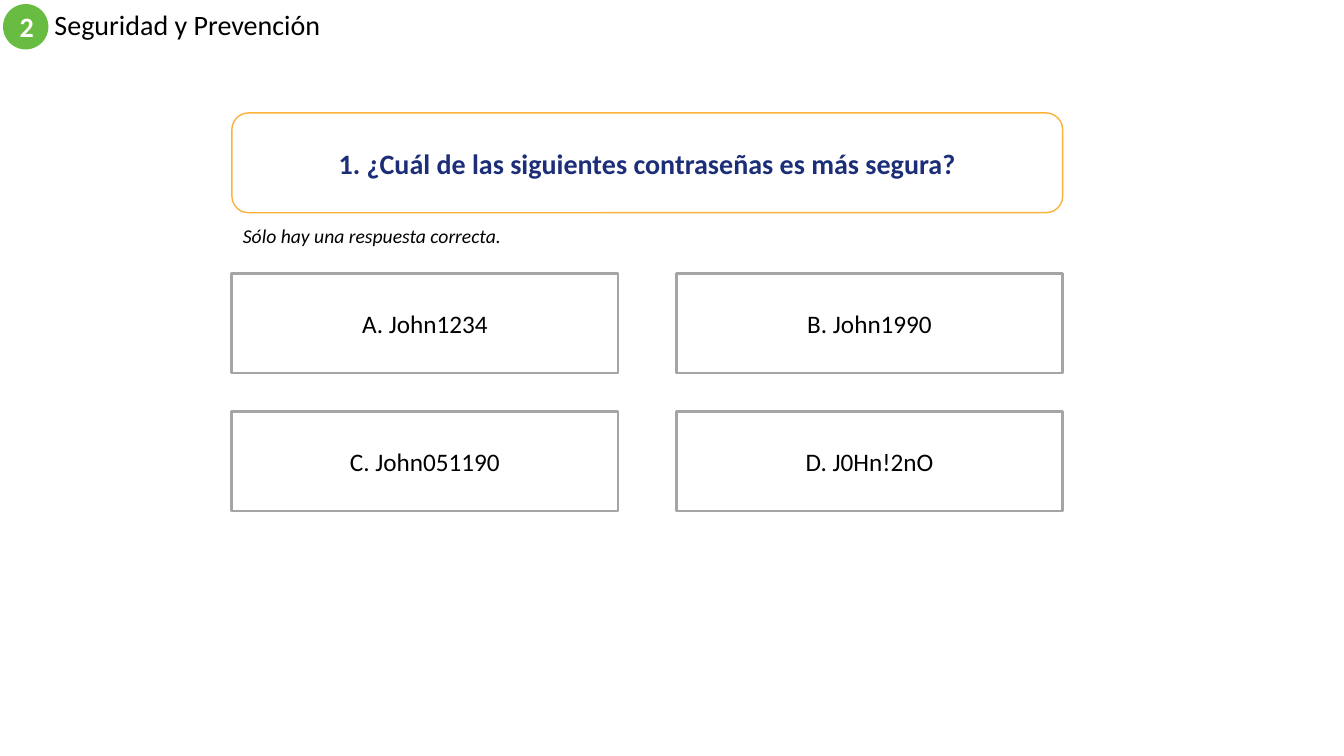
import pptx
import pptx.util
import pptx.dml.color
import pptx.enum.shapes
import pptx.enum.text
from dataclasses import dataclass

Inches = pptx.util.Inches
Kind = pptx.enum.shapes.MSO_SHAPE
Align = pptx.enum.text.PP_ALIGN
Anchor = pptx.enum.text.MSO_ANCHOR


@dataclass(frozen=True)
class Theme:
    font: str = "Calibri"
    black: str = "000000"
    white: str = "FFFFFF"
    green: str = "68BC42"
    navy: str = "1C2E78"
    amber: str = "FCB13A"
    gray: str = "A5A5A5"
    head: int = 20
    body: int = 18
    hint: int = 14


THEME = Theme()


def color(code):
    return pptx.dml.color.RGBColor.from_string(code)


def write(shape, text, size, ink=THEME.black, align=Align.CENTER,
          bold=False, italic=False):
    frame = shape.text_frame
    frame.word_wrap = True
    frame.vertical_anchor = Anchor.MIDDLE
    frame.text = text
    para = frame.paragraphs[0]
    para.alignment = align
    font = para.font
    font.name, font.size = THEME.font, pptx.util.Pt(size)
    font.bold, font.italic = bold, italic
    font.color.rgb = color(ink)
    return para


def panel(slide, kind, box, fill=THEME.white, line=None, width=1):
    shape = slide.shapes.add_shape(kind, *map(Inches, box))
    shape.shadow.inherit = False
    shape.fill.solid()
    shape.fill.fore_color.rgb = color(fill)
    if line:
        shape.line.color.rgb = color(line)
        shape.line.width = pptx.util.Pt(width)
    else:
        shape.line.fill.background()
    return shape


# Section number and title
def header(slide, box, number, text):
    left, top, width, height = box
    title = slide.shapes.title
    title.left, title.top = Inches(left + 0.41), Inches(top)
    title.width, title.height = Inches(width - 0.41), Inches(height)
    para = write(title, text, THEME.head, align=Align.LEFT)
    para.line_spacing = 0.9
    badge = panel(slide, Kind.OVAL, (left, top, height, height), THEME.green)
    write(badge, number, THEME.head, THEME.white, bold=True)


# Question frame with the hint below it
def question(slide, box, text, hint):
    left, top, width, height = box
    frame = panel(slide, Kind.ROUNDED_RECTANGLE, box, line=THEME.amber)
    write(frame, text, THEME.head, THEME.navy, bold=True)
    note = slide.shapes.add_textbox(
        *map(Inches, (left + 0.01, top + height + 0.06, 3.05, 0.34)))
    write(note, hint, THEME.hint, align=Align.LEFT, italic=True)


# Two-column grid of answers
def answers(slide, box, texts, gaps=(0.58, 0.38), cols=2):
    left, top, width, height = box
    rows = -(-len(texts) // cols)
    wide = (width - gaps[0] * (cols - 1)) / cols
    high = (height - gaps[1] * (rows - 1)) / rows
    for index, text in enumerate(texts):
        row, col = divmod(index, cols)
        cell = (left + col * (wide + gaps[0]), top + row * (high + gaps[1]),
                wide, high)
        write(panel(slide, Kind.RECTANGLE, cell, line=THEME.gray, width=2),
              text, THEME.body)


def main():
    deck = pptx.Presentation()
    deck.slide_width, deck.slide_height = Inches(13.33), Inches(7.5)
    slide = deck.slides.add_slide(deck.slide_layouts.get_by_name("Title Only"))
    left, width = 2.3, 8.24
    header(slide, (0.03, 0.04, 8.41, 0.45), "2", "Seguridad y Prevención")
    question(slide, (left, 1.12, width, 0.99),
             "1. ¿Cuál de las siguientes contraseñas es más segura?",
             "Sólo hay una respuesta correcta.")
    answers(slide, (left, 2.71, width, 2.36),
            ["A. John1234", "B. John1990", "C. John051190", "D. J0Hn!2nO"])
    deck.save("out.pptx")


if __name__ == "__main__":
    main()
